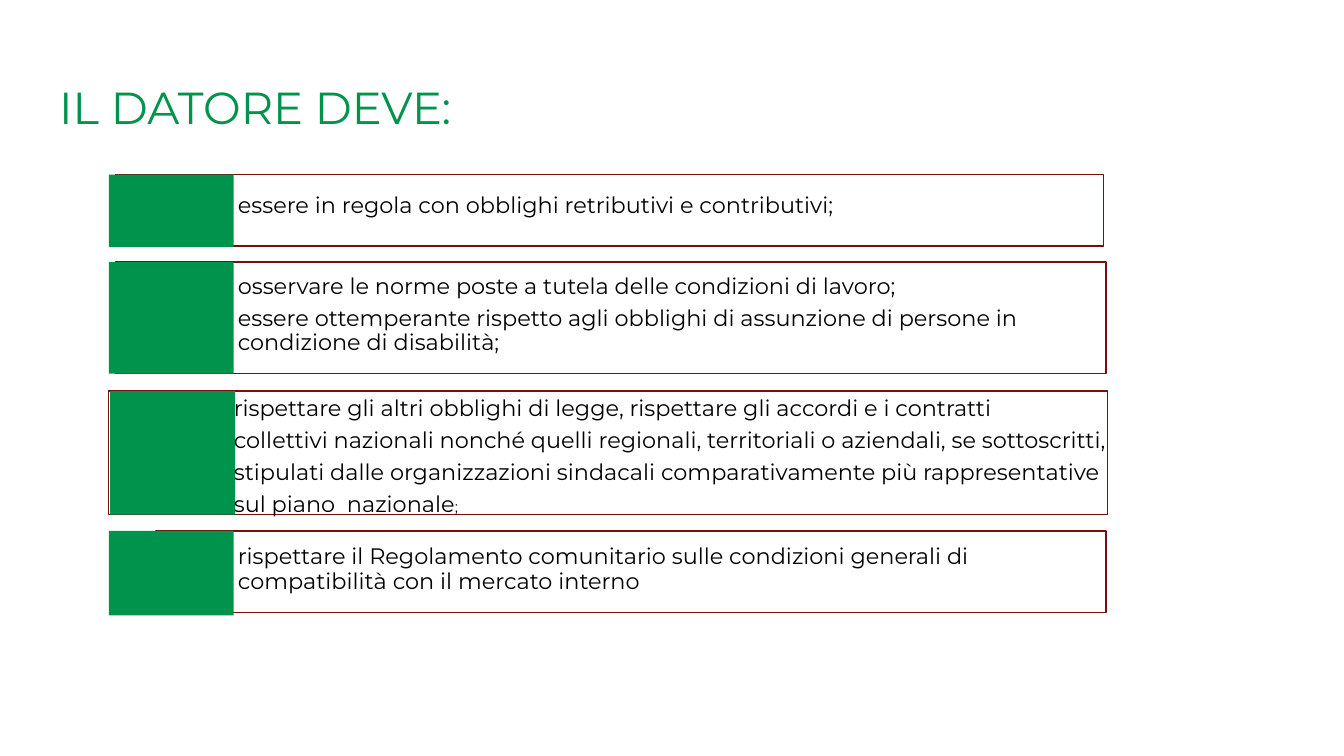
from lxml.etree import SubElement
from pptx import Presentation
from pptx.dml.color import RGBColor
from pptx.enum.shapes import MSO_SHAPE
from pptx.enum.text import MSO_ANCHOR, MSO_AUTO_SIZE, PP_ALIGN
from pptx.oxml.ns import qn
from pptx.util import Inches, Pt

GREEN = RGBColor(0x00, 0x93, 0x4C)
DARK_RED = RGBColor(0x75, 0x10, 0x0F)
WHITE = RGBColor(0xFF, 0xFF, 0xFF)
BLACK = RGBColor(0x00, 0x00, 0x00)
FONT = "Montserrat"
MARKER_WIDTH = 0.93

FRAMES = [
    (0.86, 1.3, 7.35, 0.53),
    (0.86, 1.95, 7.37, 0.83),
    (0.81, 2.91, 7.43, 0.92),
    (1.16, 3.95, 7.07, 0.61),
]
MARKERS = [(0.81, 1.3, 0.54), (0.81, 1.95, 0.83), (0.82, 2.91, 0.92), (0.81, 3.95, 0.63)]
REQUIREMENTS = [
    ((1.77, 1.23, 6.41, 0.61), [
        [("essere in regola con obblighi retributivi e contributivi;", 12)],
    ]),
    ((1.77, 2.0, 5.96, 0.69), [
        [("osservare le norme poste a tutela delle condizioni di lavoro;", 12)],
        [("essere ottemperante rispetto agli obblighi di assunzione di persone in "
          "condizione di disabilità;", 12)],
    ]),
    ((1.74, 2.89, 6.66, 1.03), [
        [("rispettare gli altri obblighi di legge, rispettare gli accordi e i contratti", 12)],
        [("collettivi nazionali nonché quelli regionali, territoriali o aziendali, "
          "se sottoscritti,", 12)],
        [("stipulati dalle organizzazioni sindacali comparativamente più rappresentative", 12)],
        [("sul piano  nazionale", 12), (";", 8)],
    ]),
    ((1.77, 3.96, 6.41, 0.56), [
        [("rispettare il Regolamento comunitario sulle condizioni generali di "
          "compatibilità con il mercato interno", 12)],
    ]),
]


def add_run(paragraph, text, size, color):
    run = paragraph.add_run()
    run.text = text
    run.font.name = FONT
    run.font.size = Pt(size)
    run.font.color.rgb = color


def set_title(slide, text):
    title = slide.shapes.title
    title.left, title.top = Inches(0.34), Inches(0.49)
    title.width, title.height = Inches(9.32), Inches(0.63)
    frame = title.text_frame
    frame.auto_size = MSO_AUTO_SIZE.NONE
    frame.vertical_anchor = MSO_ANCHOR.TOP
    frame.margin_left = frame.margin_right = Inches(0.1)
    frame.margin_top = frame.margin_bottom = Inches(0.1)
    paragraph = frame.paragraphs[0]
    paragraph.alignment = PP_ALIGN.LEFT
    add_run(paragraph, text, 24, GREEN)


def add_rectangle(slide, box, fill):
    shape = slide.shapes.add_shape(MSO_SHAPE.RECTANGLE, *map(Inches, box))
    shape.shadow.inherit = False
    shape.fill.solid()
    shape.fill.fore_color.rgb = fill
    shape.line.fill.background()
    return shape


def add_frame(slide, box):
    shape = add_rectangle(slide, box, WHITE)
    color = shape.fill._xPr.find(qn("a:solidFill")).find(qn("a:srgbClr"))
    SubElement(color, qn("a:alpha")).set("val", "40000")
    shape.line.color.rgb = DARK_RED
    shape.line.width = Pt(0.75)


def add_requirement(slide, box, paragraphs):
    frame = slide.shapes.add_textbox(*map(Inches, box)).text_frame
    frame.word_wrap = True
    frame.vertical_anchor = MSO_ANCHOR.MIDDLE
    frame.margin_left = frame.margin_right = 0
    frame.margin_top = frame.margin_bottom = 0
    for index, runs in enumerate(paragraphs):
        paragraph = frame.add_paragraph() if index else frame.paragraphs[0]
        paragraph.line_spacing = 0.9
        if index:
            paragraph.space_before = Pt(4.2)
        for text, size in runs:
            add_run(paragraph, text, size, BLACK)


def main():
    presentation = Presentation()
    presentation.slide_width = Inches(10)
    presentation.slide_height = Inches(10 * 9 / 16)
    slide = presentation.slides.add_slide(presentation.slide_layouts[5])
    set_title(slide, "IL DATORE DEVE:")
    for box in FRAMES:
        add_frame(slide, box)
    for left, top, height in MARKERS:
        add_rectangle(slide, (left, top, MARKER_WIDTH, height), GREEN)
    for box, paragraphs in REQUIREMENTS:
        add_requirement(slide, box, paragraphs)
    presentation.save("out.pptx")


if __name__ == "__main__":
    main()
